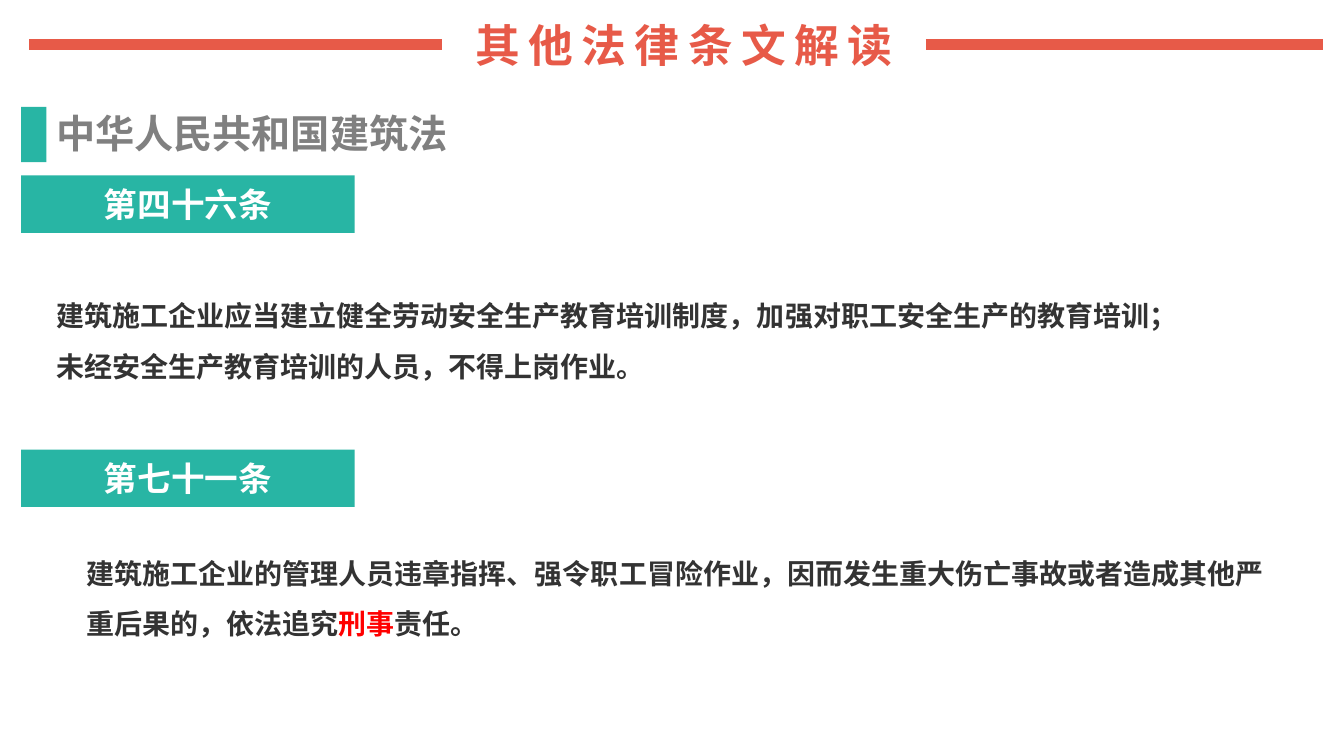
import pptx
import pptx.util
import pptx.dml.color
import pptx.enum.shapes
import pptx.enum.text
import pptx.oxml.ns
from lxml import etree

PX = 9144  # EMU per px, 100 px to the inch
FONT = "Noto Sans CJK SC"
COLORS = {"red": "E75A48", "teal": "28B5A4", "gray": "808080",
          "dark": "333333", "alert": "FF0000", "white": "FFFFFF"}
ANCHOR = pptx.enum.text.MSO_ANCHOR
ALIGN = pptx.enum.text.PP_ALIGN


def px(*lengths):
    return [pptx.util.Emu(n * PX) for n in lengths]


def rgb(name):
    return pptx.dml.color.RGBColor.from_string(COLORS[name])


class SlideBuilder:
    def __init__(self, prs):
        self.slide = prs.slides.add_slide(prs.slide_layouts[6])

    def fill_text(self, tf, paragraphs, size, spacing=0, **paragraph_format):
        """Each paragraph is a list of (text, color) runs."""
        for i, runs in enumerate(paragraphs):
            p = tf.paragraphs[0] if i == 0 else tf.add_paragraph()
            for name, value in paragraph_format.items():
                setattr(p, name, value)
            for text, color in runs:
                r = p.add_run()
                r.text = text
                style = {"size": pptx.util.Pt(size), "bold": True, "name": FONT}
                for name, value in style.items():
                    setattr(r.font, name, value)
                r.font.color.rgb = rgb(color)
                rPr = r._r.get_or_add_rPr()
                ea = etree.SubElement(rPr, pptx.oxml.ns.qn("a:ea"))
                ea.set("typeface", FONT)
                if spacing:
                    rPr.set("spc", str(spacing * 100))

    def text(self, box, paragraphs, size, anchor=ANCHOR.TOP, **text_format):
        tf = self.slide.shapes.add_textbox(*px(*box)).text_frame
        tf.word_wrap = True
        tf.vertical_anchor = anchor
        self.fill_text(tf, paragraphs, size, **text_format)

    def rect(self, box, color):
        sp = self.slide.shapes.add_shape(
            pptx.enum.shapes.MSO_SHAPE.RECTANGLE, *px(*box))
        sp.shadow.inherit = False
        sp.fill.solid()
        sp.fill.fore_color.rgb = rgb(color)
        sp.line.fill.background()
        return sp

    def label(self, top, text):
        tf = self.rect((21, top, 331, 57), "teal").text_frame
        tf.vertical_anchor = ANCHOR.MIDDLE
        self.fill_text(tf, [[(text, "white")]], 24, alignment=ALIGN.CENTER)

    def rule(self, left, right, y):
        line = self.slide.shapes.add_connector(
            pptx.enum.shapes.MSO_CONNECTOR.STRAIGHT, *px(left, y, right, y))
        line.line.color.rgb = rgb("red")
        line.line.width = pptx.util.Pt(8.25)
        etree.SubElement(line._element.spPr, pptx.oxml.ns.qn("a:effectLst"))


def main():
    prs = pptx.Presentation()
    prs.slide_width, prs.slide_height = px(1334, 750)
    s = SlideBuilder(prs)

    # Title between two rules
    s.text((462, 12, 523, 64), [[("其他法律条文解读", "red")]], 32,
           anchor=ANCHOR.MIDDLE, spacing=6)
    for left, right in ((29, 439), (919, 1313)):
        s.rule(left, right, 44)

    # Name of the law
    s.rect((21, 106, 25, 55), "teal")
    s.text((46, 104, 471, 57), [[("中华人民共和国建筑法", "gray")]], 28)

    # Articles: label and wording
    articles = [
        (174, "第四十六条", (46, 275, 1227, 105), [
            [("建筑施工企业应当建立健全劳动安全生产教育培训制度，加强对职工安全生产的教育培训；", "dark")],
            [("未经安全生产教育培训的人员，不得上岗作业。", "dark")]]),
        (446, "第七十一条", (76, 530, 1197, 105), [
            [("建筑施工企业的管理人员违章指挥、强令职工冒险作业，因而发生重大伤亡事故"
              "或者造成其他严重后果的，依法追究", "dark"),
             ("刑事", "alert"), ("责任。", "dark")]]),
    ]
    for top, heading, box, wording in articles:
        s.label(top, heading)
        s.text(box, wording, 20, line_spacing=1.5)

    prs.save("out.pptx")


if __name__ == "__main__":
    main()
